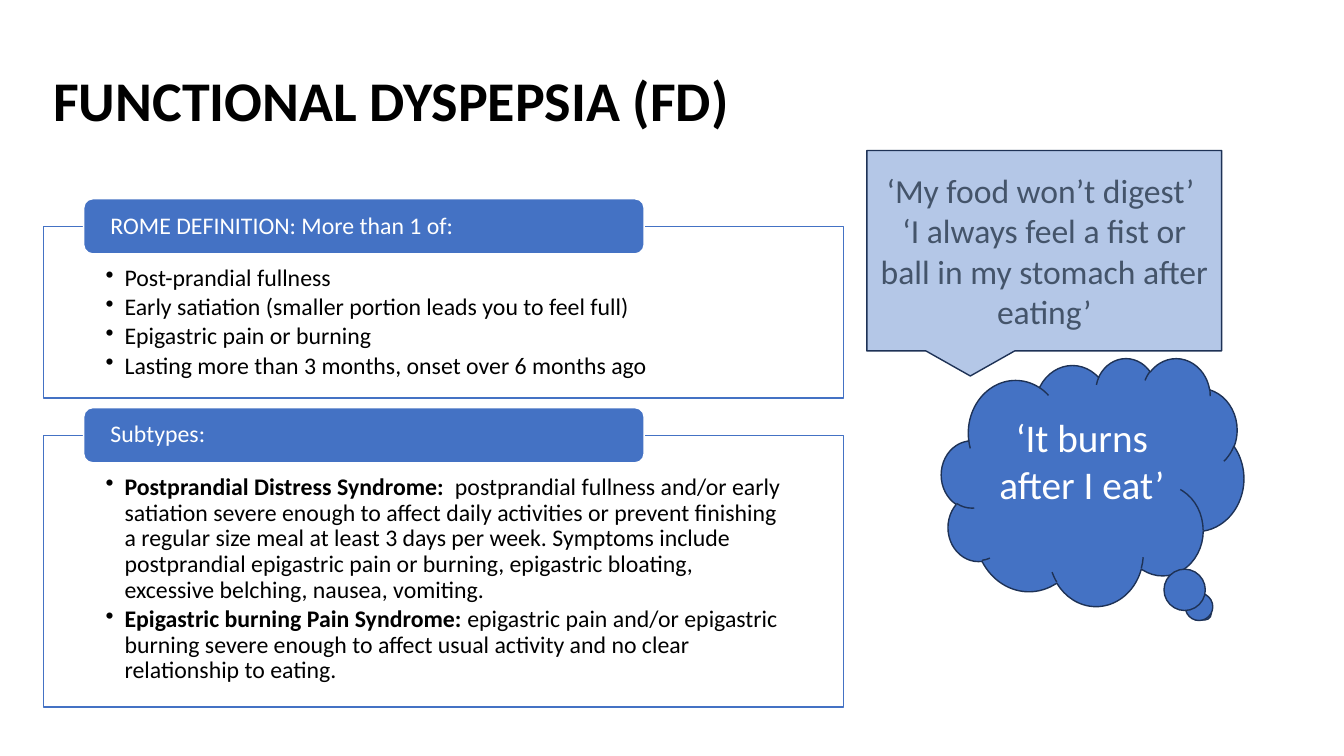
from dataclasses import dataclass

from lxml.etree import SubElement
from pptx import Presentation
from pptx.dml.color import RGBColor as RGB
from pptx.enum.shapes import MSO_SHAPE as SHAPE
from pptx.enum.text import MSO_ANCHOR as ANCHOR, PP_ALIGN as ALIGN
from pptx.oxml.ns import qn
from pptx.util import Pt


@dataclass(frozen=True)
class Theme:
    font: str = "Calibri"
    black: str = "000000"
    white: str = "FFFFFF"
    blue: str = "4472C4"
    light_blue: str = "B4C7E7"
    navy: str = "1E3256"
    slate: str = "44546A"
    title: float = 40
    body: float = 17
    quote: float = 24
    cloud: float = 28


class SlideBuilder:
    def __init__(self, slide, theme):
        self.slide = slide
        self.theme = theme

    def frame(self, sp, insets=(7.2, 3.6, 7.2, 3.6), anchor=ANCHOR.MIDDLE):
        tf = sp.text_frame
        tf.word_wrap = True
        tf.vertical_anchor = anchor
        tf.margin_left, tf.margin_top, tf.margin_right, tf.margin_bottom = map(Pt, insets)
        return tf

    def add_text(self, tf, paragraphs, size, color, align=ALIGN.LEFT, spacing=0.9, after=0):
        """Fill the frame; each paragraph is a list of (text, bold) runs."""
        for i, runs in enumerate(paragraphs):
            p = tf.paragraphs[0] if i == 0 else tf.add_paragraph()
            p.alignment = align
            p.line_spacing = spacing
            p.space_after = Pt(after)
            p.font.name = self.theme.font
            p.font.size = Pt(size)
            p.font.color.rgb = RGB.from_string(color)
            for text, bold in runs:
                r = p.add_run()
                r.text = text
                r.font.bold = bold

    def shape(self, kind, box, fill, line):
        sp = self.slide.shapes.add_shape(kind, *map(Pt, box))
        sp.shadow.inherit = False
        sp.fill.solid()
        sp.fill.fore_color.rgb = RGB.from_string(fill)
        sp.line.color.rgb = RGB.from_string(line)
        sp.line.width = Pt(1)
        return sp

    def title(self, text, box):
        sp = self.slide.shapes.add_textbox(*map(Pt, box))
        self.add_text(self.frame(sp), [[(text, True)]], self.theme.title, self.theme.black)

    def section(self, heading, bullets, top, height):
        """Outlined bullet panel with a rounded heading across its top edge."""
        t = self.theme
        panel = self.shape(SHAPE.RECTANGLE, (31, top, 571.7, height), t.white, t.blue)
        tf = self.frame(panel, (44.5, 28, 44.5, 9.4), ANCHOR.TOP)
        self.add_text(tf, bullets, t.body, t.black, after=2.5)
        for p in tf.paragraphs:
            props = p._p.get_or_add_pPr()
            props.set("marL", str(Pt(13.5)))
            props.set("indent", str(Pt(-13.5)))
            SubElement(props, qn("a:buChar"), char="•")
            props.append(props.find(qn("a:defRPr")))
        tab = self.shape(SHAPE.ROUNDED_RECTANGLE, (59.8, top - 20, 400.3, 39.4), t.blue, t.white)
        self.add_text(self.frame(tab, (17.2, 0, 17.2, 0)), [[(heading, False)]], t.body, t.white)

    def callout(self, kind, box, lines, size, fill, color, bottom=3.6, tail=None):
        sp = self.shape(kind, box, fill, self.theme.navy)
        for i, value in enumerate(tail or ()):
            sp.adjustments[i] = value
        tf = self.frame(sp, (7.2, 3.6, 7.2, bottom))
        self.add_text(tf, [[(line, False)] for line in lines], size, color, ALIGN.CENTER, 1.0)


def main():
    prs = Presentation()
    prs.slide_width, prs.slide_height = Pt(960), Pt(540)
    theme = Theme()
    s = SlideBuilder(prs.slides.add_slide(prs.slide_layouts[6]), theme)

    s.title("FUNCTIONAL DYSPEPSIA (FD)", (31, 27.4, 800.6, 92.9))

    symptoms = [
        "Post-prandial fullness",
        "Early satiation (smaller portion leads you to feel full)",
        "Epigastric pain or burning",
        "Lasting more than 3 months, onset over 6 months ago",
    ]
    s.section("ROME DEFINITION: More than 1 of:",
              [[(symptom, False)] for symptom in symptoms], 162, 122.2)

    subtypes = [
        ("Postprandial Distress Syndrome:  ",
         "postprandial fullness and/or early satiation severe enough to affect daily "
         "activities or prevent finishing a regular size meal at least 3 days per week. "
         "Symptoms include postprandial epigastric pain or burning, epigastric bloating, "
         "excessive belching, nausea, vomiting."),
        ("Epigastric burning Pain Syndrome: ",
         "epigastric pain and/or epigastric burning severe enough to affect usual "
         "activity and no clear relationship to eating."),
    ]
    s.section("Subtypes:",
              [[(name, True), (detail, False)] for name, detail in subtypes], 311.2, 193.8)

    s.callout(SHAPE.RECTANGULAR_CALLOUT, (619.2, 107.5, 253.4, 143.2),
              ["‘My food won’t digest’ ",
               "‘I always feel a fist or ball in my stomach after eating’"],
              theme.quote, theme.light_blue, theme.slate)
    s.callout(SHAPE.CLOUD_CALLOUT, (672.5, 255.6, 216, 177.1), ["‘It burns after I eat’"],
              theme.cloud, theme.blue, theme.white, bottom=25.6, tail=(0.37, 0.53))

    prs.save("out.pptx")


if __name__ == "__main__":
    main()
